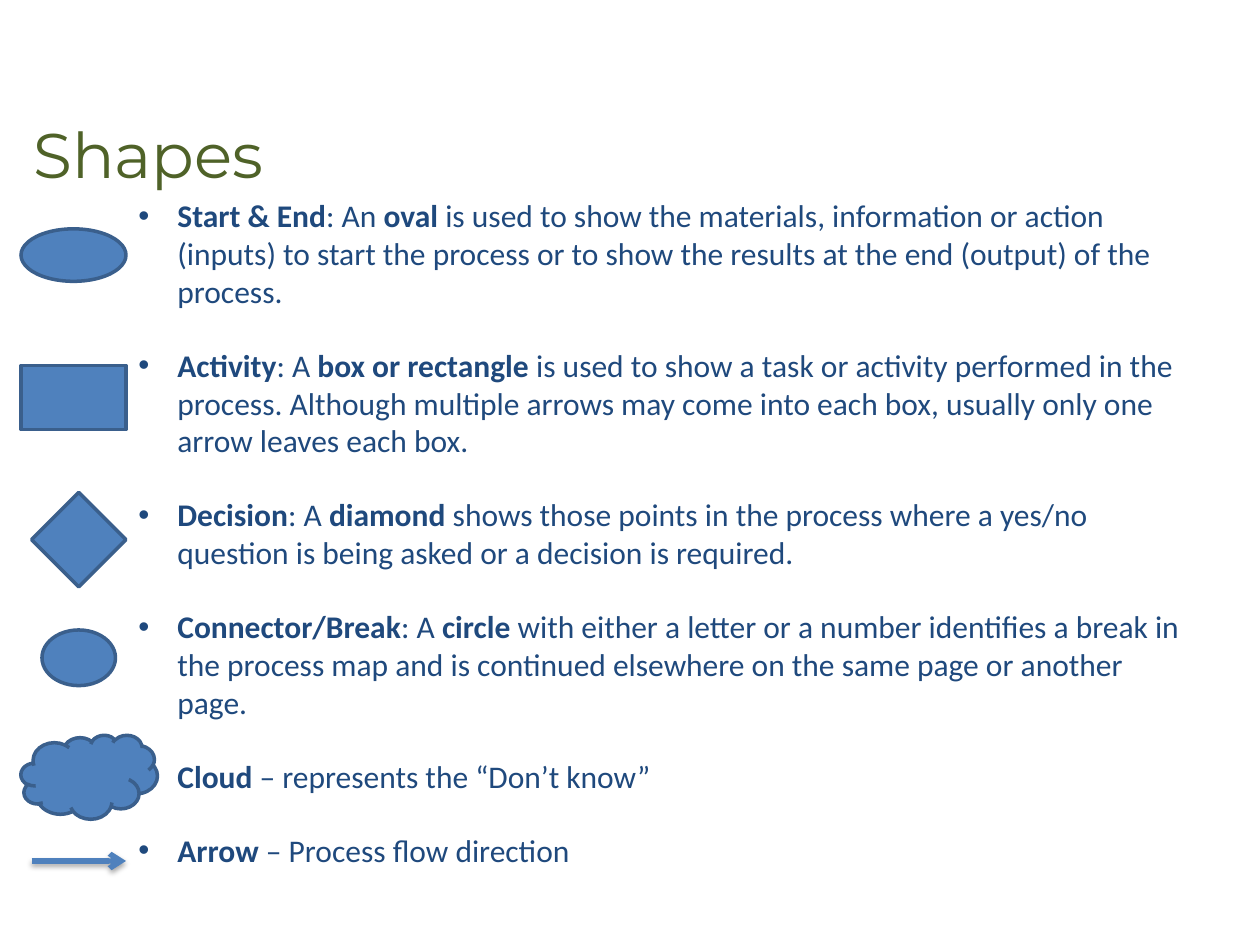
from lxml.etree import SubElement
from pptx import Presentation
from pptx.dml.color import RGBColor
from pptx.enum.shapes import MSO_CONNECTOR, MSO_SHAPE as SHAPE
from pptx.enum.text import MSO_AUTO_SIZE as FIT
from pptx.oxml import parse_xml
from pptx.oxml.ns import nsdecls, qn
from pptx.util import Inches, Pt

COLORS = {"title": "4F6228", "body": "1F497D", "fill": "4F81BD",
          "line": "3A5F8C", "shadow": "000000"}
UNIT = Inches(1) / 12  # grid of 120 columns by 90 rows
INDENT = Inches(0.31)

# Each entry alternates bold and regular runs, starting with bold.
ENTRIES = [
    ["Start & End", ": An ", "oval ",
     "is used to show the materials, information or action (inputs) to start "
     "the process or to show the results at the end (output) of the process."],
    ["Activity", ": A ", "box or rectangle ",
     "is used to show a task or activity performed in the process. Although "
     "multiple arrows may come into each box, usually only one arrow leaves "
     "each box."],
    ["Decision", ": A ", "diamond ",
     "shows those points in the process where a yes/no question is being "
     "asked or a decision is required."],
    ["Connector/Break", ": A ", "circle ",
     "with either a letter or a number identifies a break in the process map "
     "and is continued elsewhere on the same page or another page."],
    ["Cloud", " – represents the “Don’t know”"],
    ["Arrow", " – Process flow direction"],
]

# Symbol, then left, top, width, height in grid units within the column.
SYMBOLS = [
    (SHAPE.OVAL, 0, 0, 10, 5),
    (SHAPE.RECTANGLE, 0, 13, 10, 6.1),
    (SHAPE.FLOWCHART_DECISION, 1, 25.1, 9, 9),
    (SHAPE.FLOWCHART_CONNECTOR, 2, 38.2, 7, 5.3),
    (SHAPE.CLOUD, 0, 48.2, 13, 8),
]


def rgb(name):
    return RGBColor.from_string(COLORS[name])


def grid(*units):
    return [round(u * UNIT) for u in units]


def add_run(p, text, font, size, color, bold=False):
    r = p.add_run()
    r.text = text
    r.font.name, r.font.size, r.font.bold = font, Pt(size), bold
    r.font.color.rgb = rgb(color)


def add_bullet(p):
    pPr = p._p.get_or_add_pPr()
    pPr.set("marL", str(INDENT))
    pPr.set("indent", str(-INDENT))
    SubElement(pPr, qn("a:buFont")).set("typeface", "Arial")
    SubElement(pPr, qn("a:buChar")).set("char", "•")


def add_title(s, box):
    tf = s.shapes.add_textbox(*grid(*box)).text_frame
    tf.word_wrap, tf.auto_size = False, FIT.SHAPE_TO_FIT_TEXT
    add_run(tf.paragraphs[0], "Shapes", "Montserrat", 36, "title")


def add_descriptions(s, box):
    tf = s.shapes.add_textbox(*grid(*box)).text_frame
    tf.word_wrap, tf.auto_size = True, FIT.SHAPE_TO_FIT_TEXT
    for i, entry in enumerate(ENTRIES):
        p = tf.add_paragraph() if i else tf.paragraphs[0]
        if i:
            p.space_before = Pt(20.7)
        add_bullet(p)
        for j, text in enumerate(entry):
            add_run(p, text, "Calibri", 18, "body", bold=j % 2 == 0)


def add_symbols(s, left, top):
    for kind, x, y, w, h in SYMBOLS:
        sp = s.shapes.add_shape(kind, *grid(left + x, top + y, w, h))
        sp.shadow.inherit = False
        sp.fill.solid()
        sp.fill.fore_color.rgb = rgb("fill")
        sp.line.color.rgb = rgb("line")
        sp.line.width = Pt(2)
    add_flow_arrow(s, left + 1, left + 10, top + 60.2)


def add_flow_arrow(s, x1, x2, y):
    arrow = s.shapes.add_connector(MSO_CONNECTOR.STRAIGHT, *grid(x1, y, x2, y))
    arrow.line.color.rgb = rgb("fill")
    arrow.line.width = Pt(3)
    SubElement(arrow.line._get_or_add_ln(), qn("a:tailEnd")).set("type", "arrow")
    arrow._element.spPr.append(parse_xml(
        f'<a:effectLst {nsdecls("a")}>'
        f'<a:outerShdw blurRad="{Pt(3.1)}" dist="{Pt(1.8)}" dir="5400000" rotWithShape="0">'
        f'<a:srgbClr val="{COLORS["shadow"]}"><a:alpha val="35000"/></a:srgbClr>'
        '</a:outerShdw></a:effectLst>'))


def main():
    prs = Presentation()
    prs.slide_width, prs.slide_height = grid(120, 90)
    s = prs.slides.add_slide(prs.slide_layouts[6])
    add_descriptions(s, (12, 18.1, 103, 66.6))
    add_symbols(s, 2, 21.8)
    add_title(s, (2, 10.4, 26.8, 8.5))
    prs.save("out.pptx")


if __name__ == "__main__":
    main()
